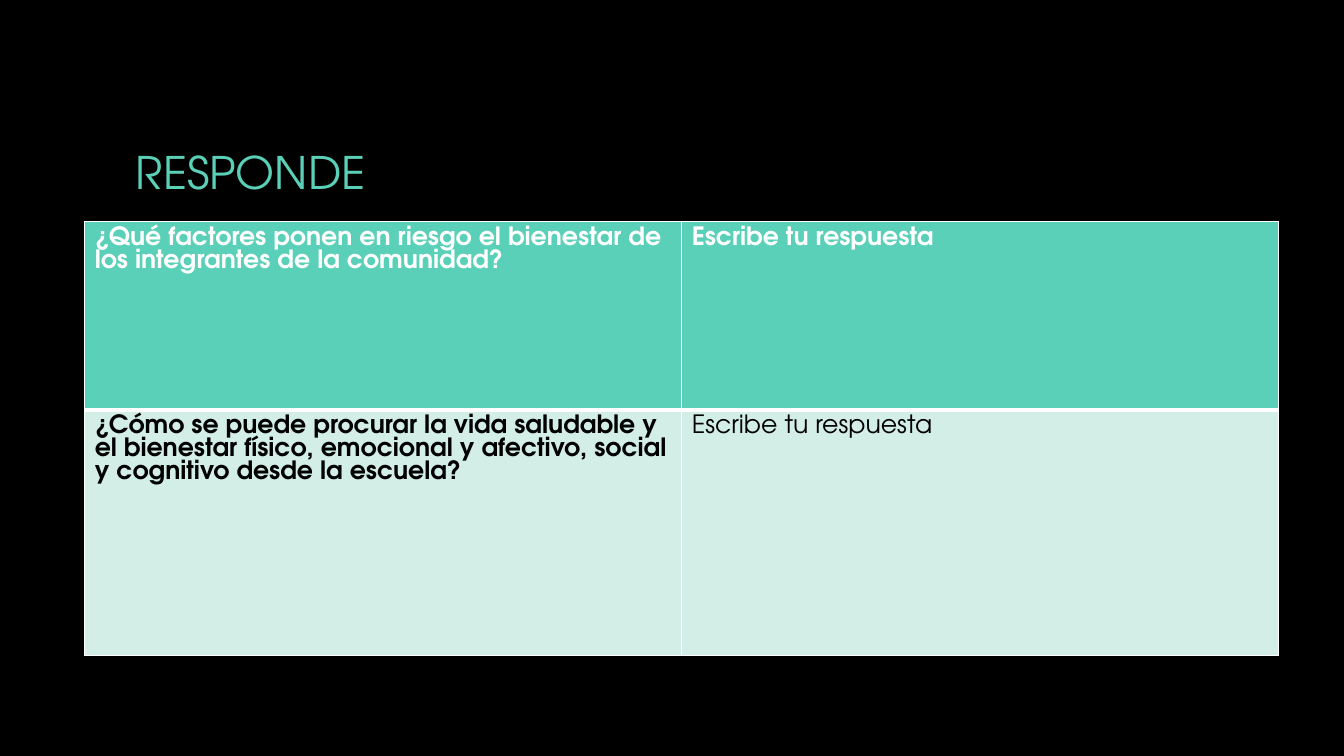
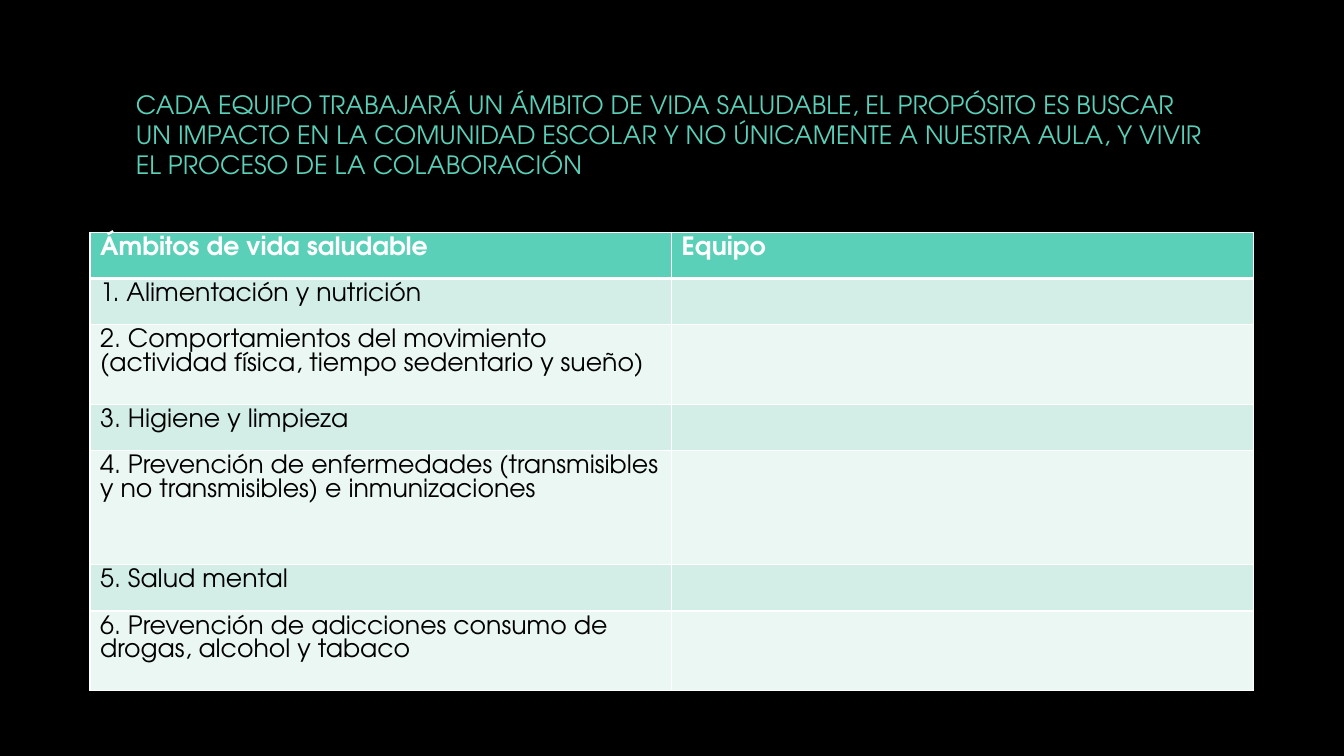
from dataclasses import dataclass

from lxml import etree
from pptx import Presentation
from pptx.dml.color import RGBColor
from pptx.enum import text
from pptx.oxml import ns
from pptx.util import Pt

# Shared look
FONT = "TeX Gyre Adventor"
BLACK, WHITE = "000000", "FFFFFF"
TEAL, MINT, PALE = "5AD0B8", "D2EEE6", "EAF7F3"
BODY_SIZE, BODY_LEADING = 18, 16.5
THIN, THICK = 1, 3
LEFT, TOP, WIDTH = 90, 48, 780


@dataclass
class Title:
    wording: str
    height: float
    size: float
    leading: float


@dataclass
class Grid:
    left: float
    top: float
    column_width: float
    row_heights: list[float]
    rows: list[tuple[str, str]]
    bold_first_column: bool = False


def color(code: str) -> RGBColor:
    return RGBColor.from_string(code)


def write(frame, wording: str, size: float, leading: float, code: str, bold: bool = False) -> None:
    para = frame.paragraphs[0]
    para.line_spacing = Pt(leading)
    span = para.add_run()
    span.text = wording
    for name, value in {"name": FONT, "size": Pt(size), "bold": bold}.items():
        setattr(span.font, name, value)
    span.font.color.rgb = color(code)


def add_title(page, title: Title) -> None:
    box = page.shapes.add_textbox(Pt(LEFT), Pt(TOP), Pt(WIDTH), Pt(title.height))
    frame = box.text_frame
    frame.word_wrap = True
    frame.vertical_anchor = text.MSO_ANCHOR.MIDDLE
    write(frame, title.wording, title.size, title.leading, TEAL)


def add_borders(cell, top: float, bottom: float) -> None:
    properties = cell._tc.get_or_add_tcPr()
    for side, width in {"L": THIN, "R": THIN, "T": top, "B": bottom}.items():
        line = etree.SubElement(properties, ns.qn(f"a:ln{side}"), w=str(Pt(width)))
        fill = etree.SubElement(line, ns.qn("a:solidFill"))
        etree.SubElement(fill, ns.qn("a:srgbClr"), val=WHITE)


def add_grid(page, grid: Grid) -> None:
    columns = len(grid.rows[0])
    table = page.shapes.add_table(
        len(grid.rows), columns, Pt(grid.left), Pt(grid.top),
        Pt(grid.column_width * columns), Pt(sum(grid.row_heights))).table
    for column in table.columns:
        column.width = Pt(grid.column_width)
    for r, (height, wordings) in enumerate(zip(grid.row_heights, grid.rows)):
        table.rows[r].height = Pt(height)
        header = r == 0
        band = TEAL if header else (PALE, MINT)[r % 2]
        for c, wording in enumerate(wordings):
            cell = table.cell(r, c)
            # The thick rule lies between the header and the first body row
            add_borders(cell, THICK if r == 1 else THIN, THICK if header else THIN)
            cell.fill.solid()
            cell.fill.fore_color.rgb = color(band)
            if wording:
                bold = header or (grid.bold_first_column and c == 0)
                write(cell.text_frame, wording, BODY_SIZE, BODY_LEADING,
                      WHITE if header else BLACK, bold)


# Slide contents
ANSWER = "Escribe tu respuesta"
ONE_LINE, TWO_LINES, TALL = 33.1, 56.9, 81.4

PAGES = [
    (Title("RESPONDE", 150, 32, 38),
     Grid(60.5, 158.4, 426.5, [134.6, 175], [
         ("¿Qué factores ponen en riesgo el bienestar de los integrantes de la comunidad?", ANSWER),
         ("¿Cómo se puede procurar la vida saludable y el bienestar físico, emocional y "
          "afectivo, social y cognitivo desde la escuela?", ANSWER),
     ], bold_first_column=True)),
    (Title("CADA EQUIPO TRABAJARÁ UN ÁMBITO DE VIDA SALUDABLE, EL PROPÓSITO ES BUSCAR "
           "UN IMPACTO EN LA COMUNIDAD ESCOLAR Y NO ÚNICAMENTE A NUESTRA AULA, Y VIVIR "
           "EL PROCESO DE LA COLABORACIÓN", 96, 18, 21.4),
     Grid(64.3, 165.8, 415.5,
          [ONE_LINE, ONE_LINE, TWO_LINES, ONE_LINE, TALL, ONE_LINE, TWO_LINES], [
              ("Ámbitos de vida saludable", "Equipo"),
              ("1. Alimentación y nutrición", ""),
              ("2. Comportamientos del movimiento (actividad física, tiempo sedentario y sueño)", ""),
              ("3. Higiene y limpieza", ""),
              ("4. Prevención de enfermedades (transmisibles y no transmisibles) e inmunizaciones", ""),
              ("5. Salud mental", ""),
              ("6. Prevención de adicciones consumo de drogas, alcohol y tabaco", ""),
          ])),
]


def main() -> None:
    deck = Presentation()
    deck.slide_width, deck.slide_height = Pt(960), Pt(540)
    for title, grid in PAGES:
        page = deck.slides.add_slide(deck.slide_layouts[6])
        page.background.fill.solid()
        page.background.fill.fore_color.rgb = color(BLACK)
        add_title(page, title)
        add_grid(page, grid)
    deck.save("out.pptx")


if __name__ == "__main__":
    main()
